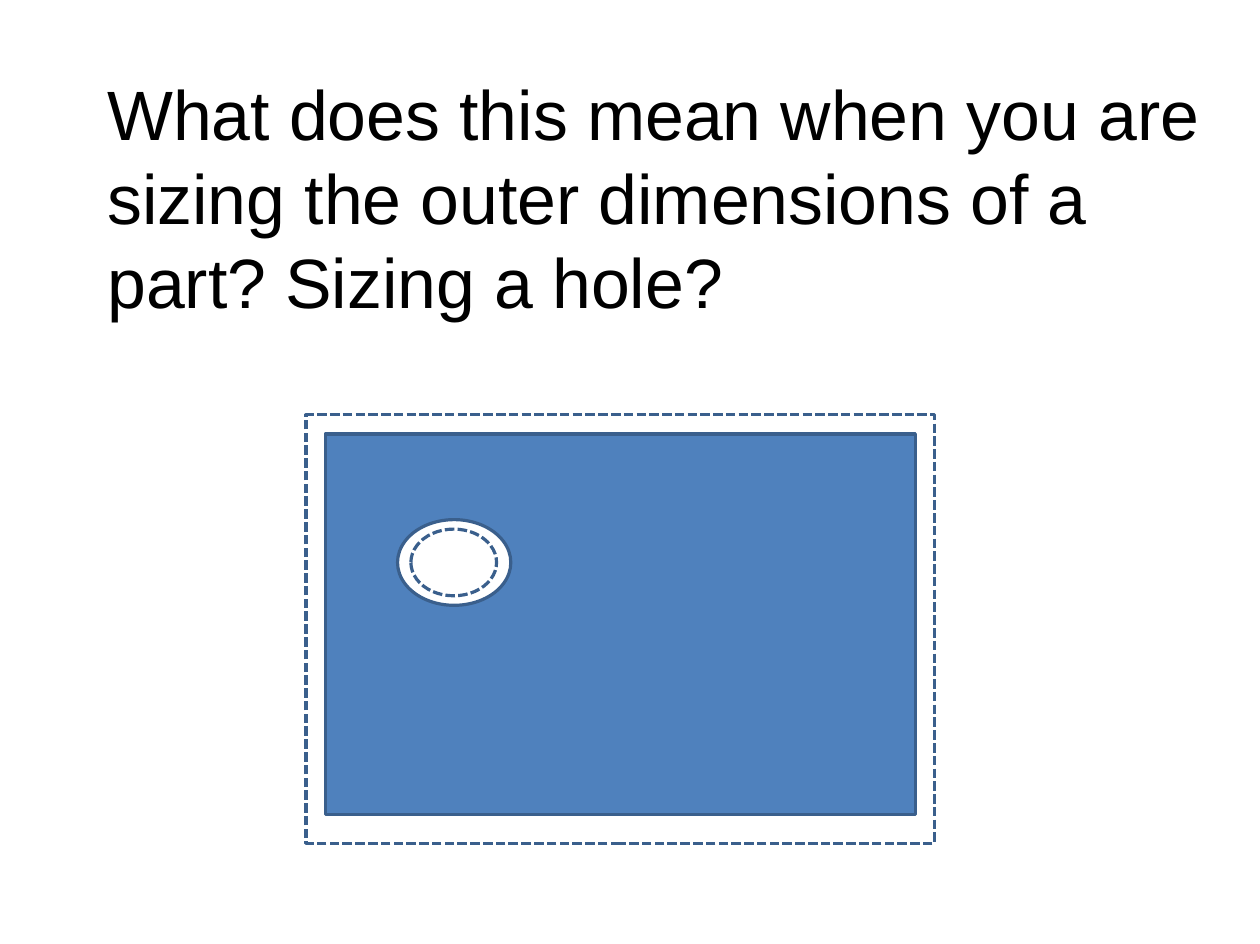
"""Build the slide on sizing a part and a hole with clearance outlines."""
import pptx
import pptx.dml.color
import pptx.enum.dml
import pptx.enum.shapes
import pptx.enum.text
import pptx.util

SLIDE_SIZE = (11.03, 8.26)
QUESTION = "What does this mean when you are sizing the outer dimensions of a part? Sizing a hole?"
QUESTION_BOX = (0.93, 0.62, 9.75, 2.22)
QUESTION_FONT = {"name": "Arial", "size": pptx.util.Pt(44)}
QUESTION_PARAGRAPH = {"line_spacing": 1.0, "alignment": pptx.enum.text.PP_ALIGN.LEFT}
QUESTION_FRAME = {
    "word_wrap": True,
    "auto_size": pptx.enum.text.MSO_AUTO_SIZE.SHAPE_TO_FIT_TEXT,
    "margin_left": pptx.util.Inches(0.01),
    "margin_top": 0,
    "margin_right": 0,
    "margin_bottom": 0,
}
LETTER_SPACING = "-5"

BLACK, WHITE, BLUE, OUTLINE = "000000", "FFFFFF", "4F81BD", "3A5F8C"
RECTANGLE = pptx.enum.shapes.MSO_SHAPE.RECTANGLE
OVAL = pptx.enum.shapes.MSO_SHAPE.OVAL
SOLID = pptx.enum.dml.MSO_LINE.SOLID
DASHED = pptx.enum.dml.MSO_LINE.SQUARE_DOT

GRID_ORIGIN = (2.68, 3.63)
GRID_CELL = 1 / 12
DIAGRAM = [
    (RECTANGLE, (0, 0, 66, 45), None, DASHED),
    (RECTANGLE, (2, 2, 62, 40), BLUE, SOLID),
    (OVAL, (9.6, 11, 11.9, 9), WHITE, SOLID),
    (OVAL, (11, 12, 9, 7), None, DASHED),
]


def color(value):
    return pptx.dml.color.RGBColor.from_string(value)


def inches(lengths):
    return [pptx.util.Inches(length) for length in lengths]


def apply_format(target, values):
    for name, value in values.items():
        setattr(target, name, value)


def add_question(slide):
    frame = slide.shapes.add_textbox(*inches(QUESTION_BOX)).text_frame
    apply_format(frame, QUESTION_FRAME)
    paragraph = frame.paragraphs[0]
    apply_format(paragraph, QUESTION_PARAGRAPH)
    run = paragraph.add_run()
    run.text = QUESTION
    apply_format(run.font, QUESTION_FONT)
    run.font.color.rgb = color(BLACK)
    run._r.get_or_add_rPr().set("spc", LETTER_SPACING)


def add_diagram(slide):
    for kind, (column, row, columns, rows), fill, dash in DIAGRAM:
        left = GRID_ORIGIN[0] + column * GRID_CELL
        top = GRID_ORIGIN[1] + row * GRID_CELL
        box = inches((left, top, columns * GRID_CELL, rows * GRID_CELL))
        shape = slide.shapes.add_shape(kind, *box)
        shape.shadow.inherit = False
        if fill:
            shape.fill.solid()
            shape.fill.fore_color.rgb = color(fill)
        else:
            shape.fill.background()
        shape.line.color.rgb = color(OUTLINE)
        apply_format(shape.line, {"width": pptx.util.Pt(2), "dash_style": dash})


def main():
    presentation = pptx.Presentation()
    presentation.slide_width, presentation.slide_height = inches(SLIDE_SIZE)
    slide = presentation.slides.add_slide(presentation.slide_layouts[6])
    add_diagram(slide)
    add_question(slide)
    presentation.save("out.pptx")


if __name__ == "__main__":
    main()
